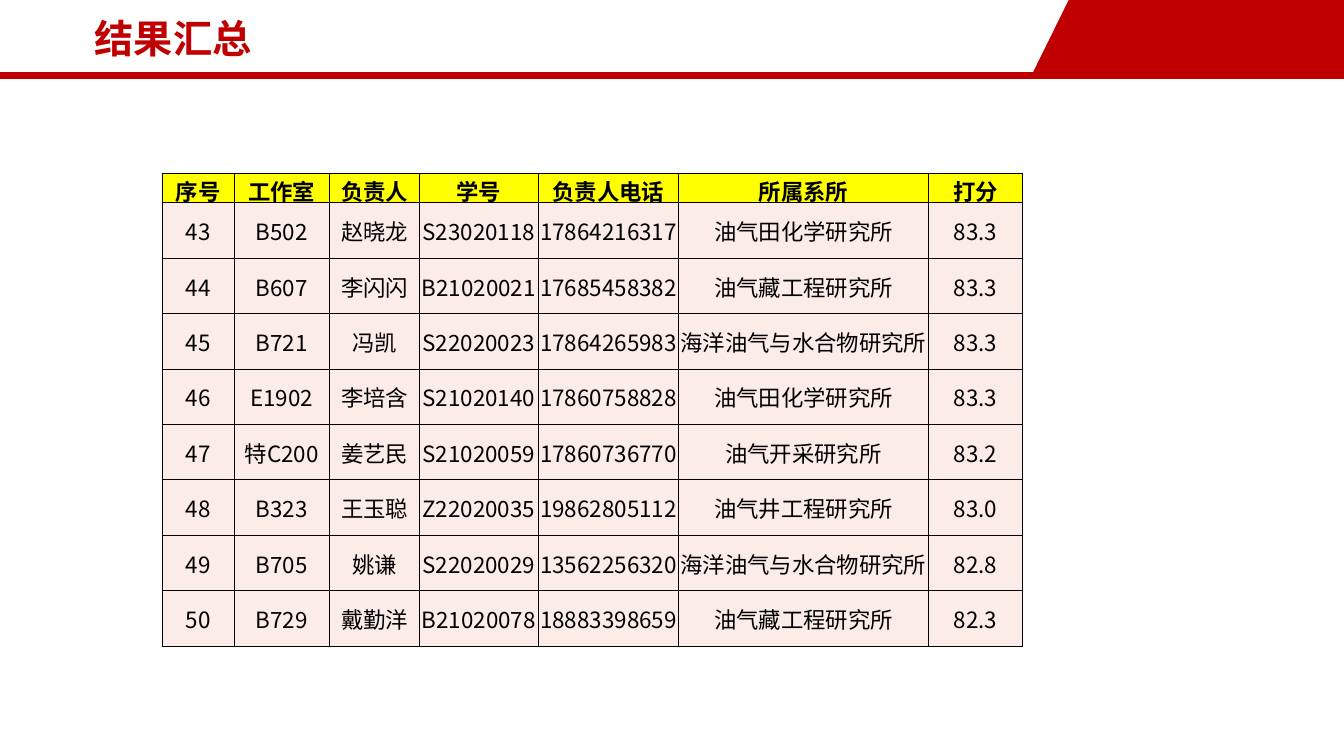
from lxml import etree
from pptx import Presentation
from pptx.dml.color import RGBColor
from pptx.enum import shapes, text
from pptx.oxml import ns
from pptx.util import Inches, Pt

FONT = "Noto Sans CJK SC"
RED, BLACK, YELLOW, PINK = "C00000", "000000", "FFFF00", "FCECE8"

HEADING = "结果汇总"
COLUMNS = [
    ("序号", 0.71), ("工作室", 0.95), ("负责人", 0.89), ("学号", 1.18),
    ("负责人电话", 1.39), ("所属系所", 2.48), ("打分", 0.93),
]
RESULTS = [
    ("43", "B502", "赵晓龙", "S23020118", "17864216317", "油气田化学研究所", "83.3"),
    ("44", "B607", "李闪闪", "B21020021", "17685458382", "油气藏工程研究所", "83.3"),
    ("45", "B721", "冯凯", "S22020023", "17864265983", "海洋油气与水合物研究所", "83.3"),
    ("46", "E1902", "李培含", "S21020140", "17860758828", "油气田化学研究所", "83.3"),
    ("47", "特C200", "姜艺民", "S21020059", "17860736770", "油气开采研究所", "83.2"),
    ("48", "B323", "王玉聪", "Z22020035", "19862805112", "油气井工程研究所", "83.0"),
    ("49", "B705", "姚谦", "S22020029", "13562256320", "海洋油气与水合物研究所", "82.8"),
    ("50", "B729", "戴勤洋", "B21020078", "18883398659", "油气藏工程研究所", "82.3"),
]
CORNER = [(10.6, 0), (13.33, 0), (13.33, 0.74), (10.23, 0.75)]
HEADER_HEIGHT, RESULT_HEIGHT = 0.29, 0.55


def rgb(value):
    return RGBColor.from_string(value)


def format_text(paragraph, size, color, bold, align):
    paragraph.alignment = align
    for run in paragraph.runs:
        run.font.size = Pt(size)
        run.font.bold = bold
        run.font.color.rgb = rgb(color)
        run.font.name = FONT
        etree.SubElement(run.font._element, ns.qn("a:ea"), typeface=FONT)


def add_borders(cell, color, width):
    properties = cell._tc.get_or_add_tcPr()
    for index, side in enumerate(("lnL", "lnR", "lnT", "lnB")):
        border = etree.Element(ns.qn(f"a:{side}"), w=str(Pt(width)))
        fill = etree.SubElement(border, ns.qn("a:solidFill"))
        etree.SubElement(fill, ns.qn("a:srgbClr"), val=color)
        properties.insert(index, border)


def add_banner(slide):
    rule = slide.shapes.add_connector(
        shapes.MSO_CONNECTOR.STRAIGHT, 0, Inches(0.75), Inches(13.33), Inches(0.75))
    rule.line.color.rgb = rgb(RED)
    rule.line.width = Pt(4.5)
    etree.SubElement(rule._element.spPr, ns.qn("a:effectLst"))

    points = [(Inches(x), Inches(y)) for x, y in CORNER]
    builder = slide.shapes.build_freeform(*points[0])
    builder.add_line_segments(points[1:])
    corner = builder.convert_to_shape()
    corner.shadow.inherit = False
    corner.fill.solid()
    corner.fill.fore_color.rgb = rgb(RED)
    corner.line.fill.background()


def add_heading(slide):
    heading = slide.shapes.title
    heading.left, heading.top = Inches(0.84), Inches(0.09)
    heading.width, heading.height = Inches(1.77), Inches(0.57)
    frame = heading.text_frame
    frame.text = HEADING
    frame.word_wrap = False
    frame.auto_size = text.MSO_AUTO_SIZE.SHAPE_TO_FIT_TEXT
    format_text(frame.paragraphs[0], 28, RED, True, text.PP_ALIGN.LEFT)


def add_results(slide):
    rows = [[label for label, _ in COLUMNS]] + RESULTS
    width = sum(size for _, size in COLUMNS)
    height = HEADER_HEIGHT + RESULT_HEIGHT * len(RESULTS)
    results = slide.shapes.add_table(
        len(rows), len(COLUMNS), Inches(1.61), Inches(1.72),
        Inches(width), Inches(height)).table
    for column, (_, size) in zip(results.columns, COLUMNS):
        column.width = Inches(size)
    for r, values in enumerate(rows):
        is_header = r == 0
        results.rows[r].height = Inches(HEADER_HEIGHT if is_header else RESULT_HEIGHT)
        for c, value in enumerate(values):
            cell = results.cell(r, c)
            cell.text_frame.text = value
            cell.margin_left = cell.margin_right = cell.margin_top = Inches(0.01)
            cell.margin_bottom = 0
            at_bottom = is_header and c == len(COLUMNS) - 1
            cell.vertical_anchor = (
                text.MSO_ANCHOR.BOTTOM if at_bottom else text.MSO_ANCHOR.MIDDLE)
            cell.fill.solid()
            cell.fill.fore_color.rgb = rgb(YELLOW if is_header else PINK)
            add_borders(cell, BLACK, 0.5)
            format_text(cell.text_frame.paragraphs[0], 16, BLACK, is_header,
                        text.PP_ALIGN.CENTER)


def main():
    deck = Presentation()
    deck.slide_width, deck.slide_height = Inches(13.33), Inches(7.5)
    slide = deck.slides.add_slide(deck.slide_layouts[5])
    add_banner(slide)
    add_heading(slide)
    add_results(slide)
    deck.save("out.pptx")


if __name__ == "__main__":
    main()
